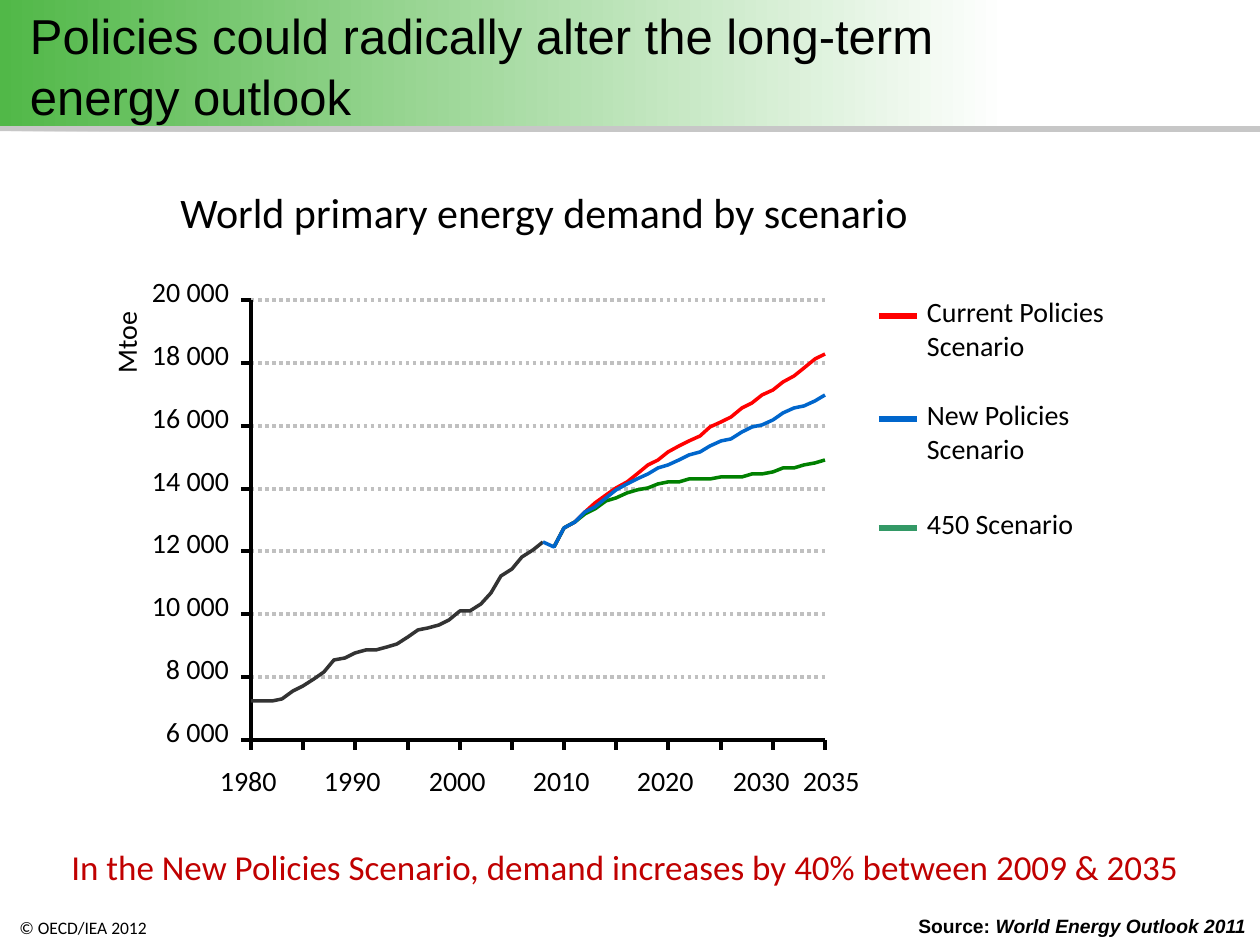
from lxml import etree
from pptx import Presentation
from pptx import util as u
from pptx.dml.color import RGBColor
from pptx.enum import dml, shapes, text
from pptx.oxml.ns import qn

PX = 914400 / 126

BLACK = RGBColor(0x00, 0x00, 0x00)
WHITE = RGBColor(0xFF, 0xFF, 0xFF)
HEADER_GREEN = RGBColor(0x51, 0xB8, 0x48)
GRID_GRAY = RGBColor(0xC0, 0xC0, 0xC0)
HISTORY_GRAY = RGBColor(0x33, 0x33, 0x33)
RED = RGBColor(0xFF, 0x00, 0x00)
BLUE = RGBColor(0x00, 0x66, 0xCC)
GREEN = RGBColor(0x00, 0x80, 0x00)
LEGEND_GREEN = RGBColor(0x33, 0x99, 0x66)
MESSAGE_RED = RGBColor(0xC0, 0x00, 0x00)

PLOT_LEFT, PLOT_RIGHT, PLOT_TOP, PLOT_BOTTOM = 251, 825, 300, 740
FIRST_YEAR, LAST_YEAR = 1980, 2035
MIN_DEMAND, MAX_DEMAND, DEMAND_STEP = 6000, 20000, 2000
TICK = 10

# Colour, first year and yearly demand in Mtoe, from back to front
CURVES = [
    (RED, 2009, [
        12140, 12740, 12940, 13260, 13540, 13780, 14020, 14220, 14460,
        14740, 14900, 15150, 15350, 15510, 15670, 15950, 16110, 16270,
        16550, 16710, 16990, 17150, 17390, 17590, 17830, 18110, 18270]),
    (GREEN, 2009, [
        12140, 12740, 12940, 13180, 13340, 13620, 13700, 13860, 13940,
        14020, 14140, 14220, 14220, 14300, 14300, 14300, 14380, 14380,
        14380, 14460, 14460, 14540, 14660, 14660, 14740, 14820, 14900]),
    (HISTORY_GRAY, 1980, [
        7240, 7240, 7240, 7320, 7560, 7720, 7930, 8170, 8530, 8610,
        8770, 8850, 8850, 8970, 9050, 9290, 9490, 9570, 9650, 9810,
        10090, 10090, 10330, 10690, 11210, 11450, 11820, 12060, 12300]),
    (BLUE, 2008, [
        12300, 12140, 12740, 12940, 13260, 13420, 13700, 13940, 14140,
        14300, 14460, 14660, 14740, 14900, 15070, 15150, 15350, 15510,
        15590, 15790, 15950, 16030, 16190, 16390, 16550, 16630, 16790,
        16990]),
]

# Labelled years, with the sideways shift that keeps the last two apart
YEAR_LABELS = {1980: 0, 1990: 0, 2000: 0, 2010: 0, 2020: 0, 2030: -9, 2035: 9}

# Text, colour, line height on the slide, text width
LEGEND = [
    ("Current Policies\vScenario", RED, 316, 195),
    ("New Policies \vScenario", BLUE, 419, 164),
    ("450 Scenario", LEGEND_GREEN, 528, 161),
]


def emu(px):
    return u.Emu(round(px * PX))


def year_x(year):
    return round(PLOT_LEFT + (year - FIRST_YEAR)
                 * (PLOT_RIGHT - PLOT_LEFT) / (LAST_YEAR - FIRST_YEAR))


def demand_y(demand):
    return round(PLOT_BOTTOM - (demand - MIN_DEMAND)
                 * (PLOT_BOTTOM - PLOT_TOP) / (MAX_DEMAND - MIN_DEMAND))


def style_run(run, color=BLACK, **font_format):
    for name, value in font_format.items():
        setattr(run.font, name, value)
    run.font.color.rgb = color


def add_text(page, area, words, size, font="Calibri", color=BLACK,
             frame_format=None, **para_format):
    """Add a one-paragraph text box and return its shape."""
    box = page.shapes.add_textbox(*map(emu, area))
    frame = box.text_frame
    for name, value in {"word_wrap": True, **(frame_format or {})}.items():
        setattr(frame, name, value)
    para = frame.paragraphs[0]
    para.text = words
    for name, value in para_format.items():
        setattr(para, name, value)
    for run in para.runs:
        style_run(run, color, name=font, size=u.Pt(size))
    for line_break in para._p.findall(qn("a:br")):
        etree.SubElement(line_break, qn("a:rPr"), sz=str(size * 100))
    return box


def add_label(page, area, words):
    """Add a chart label: 16 pt, no insets, no wrapping."""
    margins = {f"margin_{side}": 0 for side in ("left", "top", "right", "bottom")}
    return add_text(page, area, words, 16,
                    frame_format={"word_wrap": False, **margins})


def add_line(page, start, end, color=BLACK, width=0, dash=None):
    line = page.shapes.add_connector(
        shapes.MSO_CONNECTOR.STRAIGHT, *map(emu, (*start, *end)))
    line.line.color.rgb = color
    line.line.width = u.Pt(width)
    if dash:
        line.line.dash_style = dash
    etree.SubElement(line._element.spPr, qn("a:effectLst"))


def add_curve(page, color, first_year, demands):
    points = [(emu(year_x(year)), emu(demand_y(demand)))
              for year, demand in enumerate(demands, first_year)]
    builder = page.shapes.build_freeform(*points[0])
    builder.add_line_segments(points[1:], close=False)
    curve = builder.convert_to_shape()
    curve.shadow.inherit = False
    curve.fill.background()
    curve.line.color.rgb = color
    curve.line.width = u.Pt(2)


def add_header(page):
    band = page.shapes.add_shape(
        shapes.MSO_SHAPE.RECTANGLE, *map(emu, (0, 0, 1260, 126)))
    band.line.fill.background()
    band.fill.gradient()
    band.fill.gradient_angle = 0
    stops = ((0, HEADER_GREEN), (0.8, WHITE))
    for stop, (position, color) in zip(band.fill.gradient_stops, stops):
        stop.position = position
        stop.color.rgb = color
    band.shadow.inherit = False
    effects = band._element.spPr.find(qn("a:effectLst"))
    shadow = etree.SubElement(effects, qn("a:outerShdw"), blurRad="0",
                              dist=str(u.Pt(3)), dir="5400000", rotWithShape="0")
    tint = etree.SubElement(shadow, qn("a:srgbClr"), val="808080")
    etree.SubElement(tint, qn("a:alpha"), val="43000")
    add_text(page, (0, 0, 994, 129),
             "Policies could radically alter the long-term energy outlook",
             28, "Arial", line_spacing=u.Pt(35),
             frame_format={"margin_left": emu(30),
                           "vertical_anchor": text.MSO_ANCHOR.MIDDLE})


def add_axes(page):
    demands = range(MIN_DEMAND, MAX_DEMAND + 1, DEMAND_STEP)
    for demand in demands[1:]:
        y = demand_y(demand)
        add_line(page, (PLOT_LEFT, y), (PLOT_RIGHT, y), GRID_GRAY,
                 dash=dml.MSO_LINE.ROUND_DOT)
    add_line(page, (PLOT_LEFT, PLOT_TOP), (PLOT_LEFT, PLOT_BOTTOM + TICK))
    add_line(page, (PLOT_LEFT, PLOT_BOTTOM), (PLOT_RIGHT, PLOT_BOTTOM))
    for demand in demands:
        y = demand_y(demand)
        add_line(page, (PLOT_LEFT - TICK, y), (PLOT_LEFT, y))
        left, width = (152, 86) if demand >= 10000 else (166, 69)
        add_label(page, (left, y - 25, width, 44),
                  f"{demand:,}".replace(",", " "))
    for year in range(FIRST_YEAR + 5, LAST_YEAR + 1, 5):
        x = year_x(year)
        add_line(page, (x, PLOT_BOTTOM + TICK), (x, PLOT_BOTTOM))
    for year, shift in YEAR_LABELS.items():
        add_label(page, (year_x(year) - 31 + shift, 764, 63, 44), str(year))
    add_label(page, (87, 314, 81, 37), "Mtoe").rotation = 270


def add_legend(page):
    for words, color, y, width in LEGEND:
        add_line(page, (879, y), (917, y), color, 3)
        height = 44 * (1 + words.count("\v"))
        add_label(page, (927, y - 21, width, height), words)


def main():
    deck = Presentation()
    deck.slide_width, deck.slide_height = emu(1260), emu(945)
    page = deck.slides.add_slide(deck.slide_layouts[6])
    add_header(page)
    add_text(page, (-5, 911, 164, 34), "© OECD/IEA 2012", 10,
             alignment=text.PP_ALIGN.RIGHT)
    add_text(page, (59, 839, 1162, 49),
             "In the New Policies Scenario, demand increases by 40% "
             "between 2009 & 2035", 20, color=MESSAGE_RED)
    add_text(page, (168, 147, 925, 129),
             "World primary energy demand by scenario", 24,
             frame_format={"vertical_anchor": text.MSO_ANCHOR.MIDDLE})
    add_axes(page)
    for curve in CURVES:
        add_curve(page, *curve)
    add_legend(page)
    source = add_text(page, (906, 908, 354, 37), "Source: ", 11, "Arial")
    para = source.text_frame.paragraphs[0]
    para.runs[0].font.bold = True
    report = para.add_run()
    report.text = "World Energy Outlook 2011"
    style_run(report, name="Arial", size=u.Pt(11), bold=True, italic=True)
    deck.save("out.pptx")


if __name__ == "__main__":
    main()
